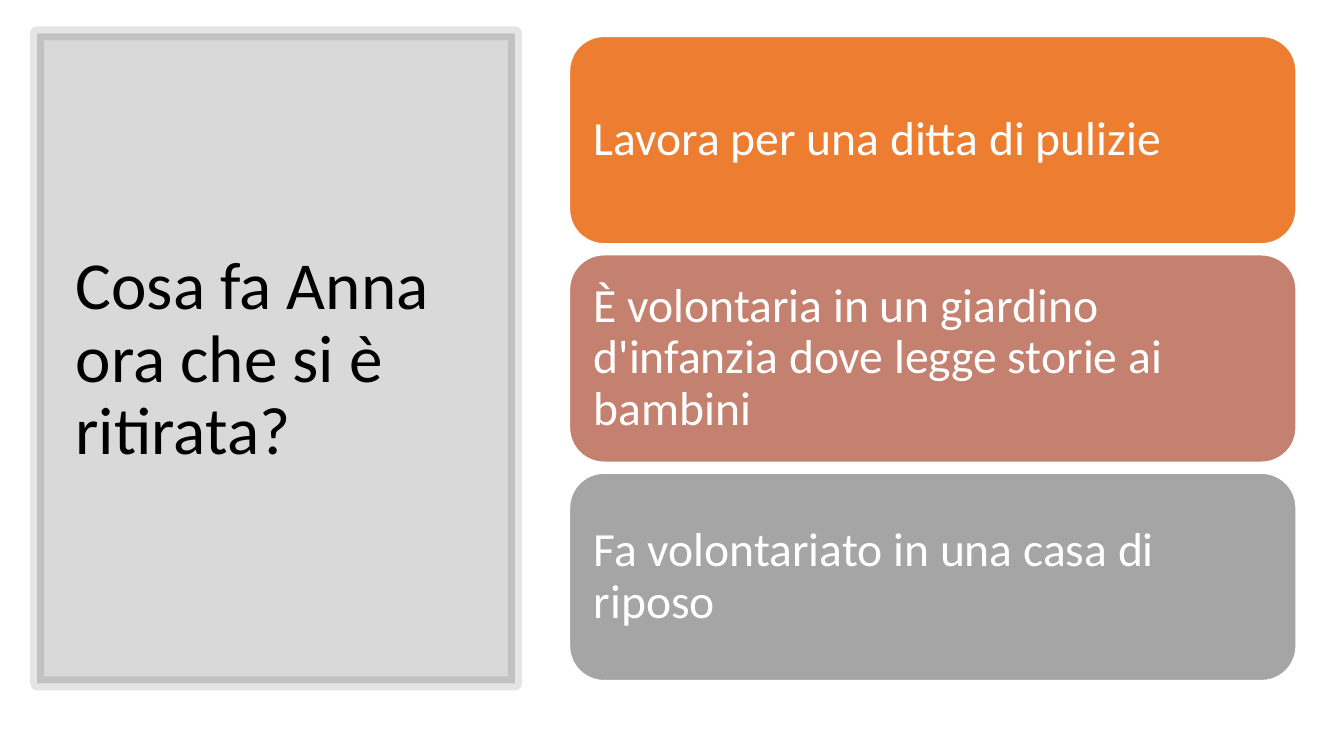
from lxml import etree
from pptx import Presentation
from pptx import util as u
from pptx.dml.color import RGBColor
from pptx.enum import shapes, text
from pptx.oxml.ns import qn

HUES = {"ink": "000000", "paper": "FFFFFF", "orange": "ED7D31",
        "rose": "C48170", "gray": "A5A5A5"}


class Deck:
    font = "Calibri"

    def __init__(self):
        self.prs = Presentation()
        self.prs.slide_width, self.prs.slide_height = u.Pt(960), u.Pt(540)
        self.slide = self.prs.slides.add_slide(self.prs.slide_layouts[5])

    def paint(self, fill, hue, alpha=100):
        fill.solid()
        fill.fore_color.rgb = RGBColor.from_string(HUES[hue])
        if alpha < 100:
            for node in fill._xPr.find(qn("a:solidFill")):
                etree.SubElement(node, qn("a:alpha"), val=str(alpha * 1000))

    def box(self, kind, rect, hue, edge, width, alpha=100, fade=100):
        box = self.slide.shapes.add_shape(kind, *map(u.Pt, rect))
        box.shadow.inherit = False
        self.paint(box.fill, hue, alpha)
        box.line.width = u.Pt(width)
        self.paint(box.line.fill, edge, fade)
        return box

    def label(self, shape, words, size, hue, pad):
        frame = shape.text_frame
        frame.text = words
        frame.word_wrap = True
        frame.auto_size = text.MSO_AUTO_SIZE.NONE
        frame.vertical_anchor = text.MSO_ANCHOR.MIDDLE
        frame.margin_left = frame.margin_right = u.Pt(pad)
        par = frame.paragraphs[0]
        par.alignment = text.PP_ALIGN.LEFT
        par.line_spacing = 0.9
        par.font.name, par.font.size = self.font, u.Pt(size)
        par.font.color.rgb = RGBColor.from_string(HUES[hue])

    def panel(self, rect):
        self.box(shapes.MSO_SHAPE.RECTANGLE, rect, "ink", "ink", 10, 15, 10)

    def title(self, words, rect):
        title = self.slide.shapes.title
        title.left, title.top, title.width, title.height = map(u.Pt, rect)
        self.label(title, words, 48, "ink", 7.2)
        self.slide.shapes._spTree.append(title._element)

    def card(self, words, rect, hue):
        card = self.box(shapes.MSO_SHAPE.ROUNDED_RECTANGLE, rect, hue, "paper", 1)
        self.label(card, words, 34, "paper", 10)


def main():
    deck = Deck()
    deck.panel((26.6, 23.8, 341.3, 464.4))
    deck.title("Cosa fa Anna ora che si è ritirata?", (46.8, 50.4, 299.5, 414))
    cards = [
        ("Lavora per una ditta di pulizie", "orange"),
        ("È volontaria in un giardino d'infanzia dove legge storie ai bambini", "rose"),
        ("Fa volontariato in una casa di riposo", "gray"),
    ]
    for row, (words, hue) in enumerate(cards):
        deck.card(words, (406.8, 26 + row * 156, 519, 148.2), hue)
    deck.prs.save("out.pptx")


if __name__ == "__main__":
    main()
